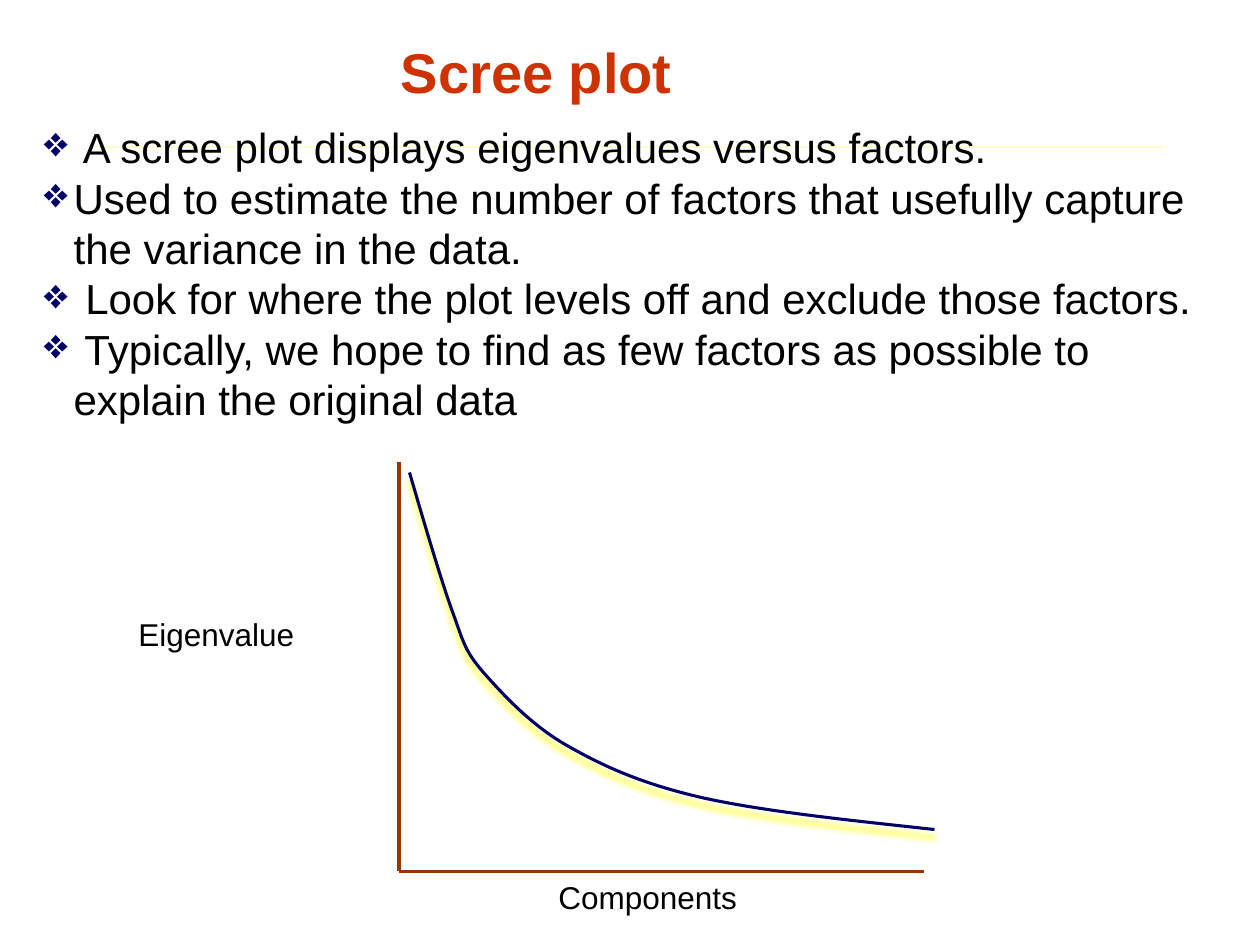
from lxml.etree import SubElement
from pptx import Presentation
from pptx.dml.color import RGBColor
from pptx.enum.shapes import MSO_CONNECTOR
from pptx.enum.text import MSO_AUTO_SIZE
from pptx.oxml.ns import qn
from pptx.util import Pt

THEME = {
    "font": "Arial",
    "title": "CC3300", "text": "000000", "navy": "000066",
    "axis": "993300", "rule": "FFFFCC", "glow": "FFFF00",
    "title_size": 32, "body_size": 24, "label_size": 18,
}

TITLE = "Scree plot"
POINTS = [
    " A scree plot displays eigenvalues versus factors.",
    "Used to estimate the number of factors that usefully capture the variance in the data.",
    " Look for where the plot levels off and exclude those factors.",
    " Typically, we hope to find as few factors as possible to explain the original data",
]
LABELS = [("Eigenvalue", (72, 348, 144, 29)), ("Components", (312, 498, 156, 29))]

ORIGIN = (228, 498)
LINES = [
    ((54, 84), (666, 84), "rule", 0.75),
    ((228, 264), ORIGIN, "axis", 2),
    ((528, 498), ORIGIN, "axis", 2),
]
START = (234, 270)
CURVES = [  # two control points, then the end point
    ((242.6, 299.5), (251.3, 329), (258, 348)),
    ((265, 367), (265, 371), (276, 384)),
    ((287.3, 396.7), (303, 414), (324, 426)),
    ((345, 438), (367, 448), (402, 456)),
    ((437, 463.7), (485.3, 468.7), (534, 474)),
]
INDENT = 17


def color(name):
    return RGBColor.from_string(THEME[name])


def add_text(slide, box, lines, size, tint="text", bold=False, wrap=True):
    frame = slide.shapes.add_textbox(*map(Pt, box)).text_frame
    frame.word_wrap = wrap
    frame.auto_size = MSO_AUTO_SIZE.SHAPE_TO_FIT_TEXT
    for i, line in enumerate(lines):
        para = frame.add_paragraph() if i else frame.paragraphs[0]
        run = para.add_run()
        run.text = line
        font = run.font
        font.name, font.size, font.bold = THEME["font"], Pt(THEME[size]), bold
        font.color.rgb = color(tint)
    return frame


def add_bullet(para):
    props = para._p.get_or_add_pPr()
    props.set("marL", str(Pt(INDENT)))
    props.set("indent", str(-Pt(INDENT)))
    tint = SubElement(props, qn("a:buClr"))
    SubElement(tint, qn("a:srgbClr"), val=THEME["navy"])
    SubElement(props, qn("a:buChar"), char="❖")


def add_line(slide, start, end, tint, width):
    line = slide.shapes.add_connector(MSO_CONNECTOR.STRAIGHT, *map(Pt, start + end))
    line.line.color.rgb = color(tint)
    line.line.width = Pt(width)
    SubElement(line._element.spPr, qn("a:effectLst"))


def add_curve(slide):
    """Draw the point chain as a freeform, then join each three points as a cubic."""
    build = slide.shapes.build_freeform(*map(Pt, START))
    chain = [tuple(map(Pt, point)) for curve in CURVES for point in curve]
    build.add_line_segments(chain, close=False)
    shape = build.convert_to_shape()
    steps = list(shape._element.iter(qn("a:lnTo")))
    trace = steps[0].getparent()
    for i in range(0, len(steps), 3):
        cubic = SubElement(trace, qn("a:cubicBezTo"))
        for step in steps[i:i + 3]:
            cubic.append(step[0])
            trace.remove(step)
    shape.fill.background()
    shape.line.color.rgb = color("navy")
    shape.line.width = Pt(1.75)
    shape.shadow.inherit = False
    effects = shape._element.spPr.find(qn("a:effectLst"))
    glow = SubElement(effects, qn("a:outerShdw"), blurRad=str(Pt(4)),
                      dist=str(Pt(4)), dir=str(90 * 60000), rotWithShape="0")
    SubElement(glow, qn("a:srgbClr"), val=THEME["glow"])


def main():
    deck = Presentation()
    deck.slide_width, deck.slide_height = Pt(720), Pt(540)
    slide = deck.slides.add_slide(deck.slide_layouts[6])
    add_text(slide, (222, 18, 170.6, 46), [TITLE], "title_size", "title", True, False)
    for line in LINES:
        add_line(slide, *line)
    body = add_text(slide, (18, 66, 678, 181.5), POINTS, "body_size")
    for para in body.paragraphs:
        add_bullet(para)
    for label, box in LABELS:
        add_text(slide, box, [label], "label_size")
    add_curve(slide)
    deck.save("out.pptx")


if __name__ == "__main__":
    main()
